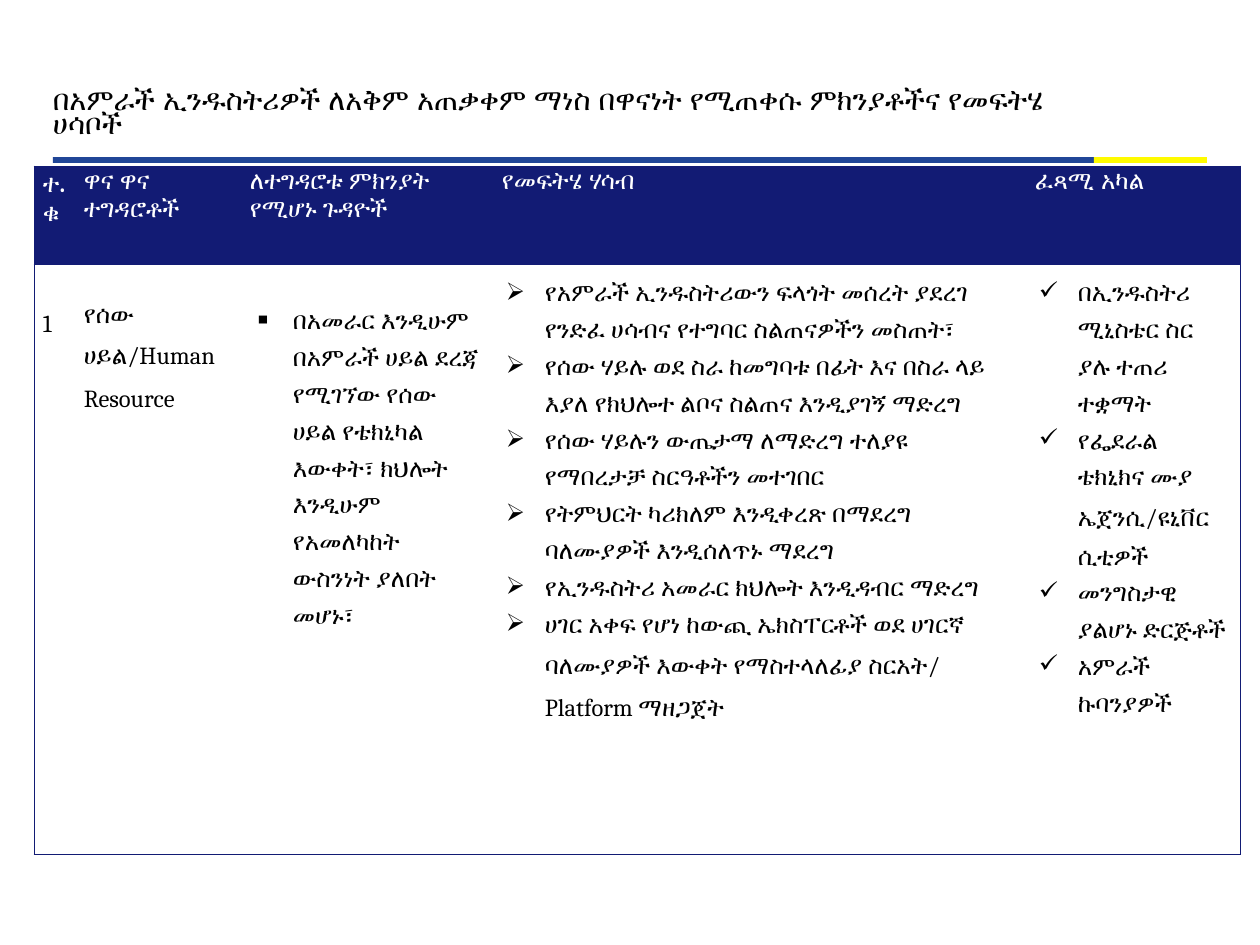
from lxml import etree
from pptx import Presentation
from pptx import util as u
from pptx.dml.color import RGBColor
from pptx.enum import shapes, text
from pptx.oxml.ns import qn

PX = 914400 // 126
NAVY, BLUE, YELLOW = "121B74", "204697", "FFFB00"
WHITE, BLACK = "FFFFFF", "000000"


def color(value):
    return RGBColor.from_string(value)


class Canvas:
    """Holds the text style and the current page."""
    font, size = "Cambria", u.Pt(14)

    def __init__(self, page):
        self.page = page

    def bar(self, left, top, width, height, fill):
        shape = self.page.shapes.add_shape(
            shapes.MSO_SHAPE.RECTANGLE, *(n * PX for n in (left, top, width, height)))
        shape.shadow.inherit = False
        shape.fill.solid()
        shape.fill.fore_color.rgb = color(fill)
        shape.line.fill.background()

    def words(self, para, words, ink, bold=False, spacing=1.0, font=None, size=None):
        para.line_spacing = spacing
        span = para.add_run()
        span.text = words
        style = {"name": font or self.font, "size": size or self.size, "bold": bold}
        for name, value in style.items():
            setattr(span.font, name, value)
        span.font.color.rgb = color(ink)

    def title(self, left, top, width, height, words):
        box = self.page.shapes.add_textbox(*(n * PX for n in (left, top, width, height)))
        frame = box.text_frame
        layout = {"word_wrap": True, "vertical_anchor": text.MSO_ANCHOR.MIDDLE,
                  "margin_left": 0, "margin_right": 0, "margin_top": 0, "margin_bottom": 0}
        for name, value in layout.items():
            setattr(frame, name, value)
        self.words(frame.paragraphs[0], words, BLACK, True, 0.7, "Karla", u.Pt(16.6))

    def table(self, left, top, widths, heights):
        frame = self.page.shapes.add_table(
            len(heights), len(widths), left * PX, top * PX,
            sum(widths) * PX, sum(heights) * PX)
        for column, width in zip(frame.table.columns, widths):
            column.width = width * PX
        for row, height in zip(frame.table.rows, heights):
            row.height = height * PX
        return frame.table

    def cell(self, cell, paras, fill, ink, sides, margins, bullet=None, **style):
        names = ("margin_left", "margin_top", "margin_right", "margin_bottom")
        for name, value in zip(names, margins):
            setattr(cell, name, value * PX)
        self.borders(cell, sides)
        cell.fill.solid()
        cell.fill.fore_color.rgb = color(fill)
        for index, words in enumerate(paras):
            frame = cell.text_frame
            para = frame.add_paragraph() if index else frame.paragraphs[0]
            if bullet:
                self.bullet(para, bullet)
            self.words(para, words, ink, **style)

    def borders(self, cell, sides):
        props = cell._tc.get_or_add_tcPr()
        for side in "LRTB":
            line = etree.SubElement(props, qn("a:ln" + side), w=str(u.Pt(0.5)))
            if side in sides:
                fill = etree.SubElement(line, qn("a:solidFill"))
                etree.SubElement(fill, qn("a:srgbClr"), val=NAVY)
            else:
                etree.SubElement(line, qn("a:noFill"))

    def bullet(self, para, mark):
        props = para._p.get_or_add_pPr()
        props.set("marL", str(39 * PX))
        props.set("indent", str(-39 * PX))
        etree.SubElement(props, qn("a:buChar"), char=mark)


HEADINGS = [  # words, bold
    ("ተ.ቁ", True),
    ("ዋና ዋና ተግዳሮቶች", False),
    ("ለተግዳሮቱ ምክንያት የሚሆኑ ጉዳዮች", False),
    ("የመፍትሄ ሃሳብ", True),
    ("ፈጻሚ አካል", True),
]
LISTED = (13, 6, 13, 6)
BODY = [  # bullet, margins, paragraphs
    (None, (9, 32, 9, 0), ["1"]),
    (None, (9, 28, 9, 0), ["የሰው ሀይል/Human Resource"]),
    ("▪", (13, 34, 13, 6), [
        "በአመራር እንዲሁም በአምራች ሀይል ደረጃ የሚገኘው የሰው ሀይል የቴክኒካል "
        "እውቀት፣ ክህሎት እንዲሁም የአመለካከት ውስንነት ያለበት መሆኑ፣"]),
    ("➢", LISTED, [
        "የአምራች ኢንዱስትሪውን ፍላጎት መሰረት ያደረገ የንድፈ ሀሳብና የተግባር ስልጠናዎችን መስጠት፣",
        "የሰው ሃይሉ ወደ ስራ ከመግባቱ በፊት እና በስራ ላይ እያለ የክህሎተ ልቦና ስልጠና እንዲያገኝ ማድረግ",
        "የሰው ሃይሉን ውጤታማ ለማድረግ ተለያዩ የማበረታቻ ስርዓቶችን መተገበር",
        "የትምህርት ካሪክለም እንዲቀረጽ በማደረግ ባለሙያዎች እንዲሰለጥኑ ማደረግ",
        "የኢንዱስትሪ አመራር ክህሎት እንዲዳብር ማድረግ",
        "ሀገር አቀፍ የሆነ ከውጪ ኤክስፐርቶች ወደ ሀገርኛ ባለሙያዎች እውቀት "
        "የማስተላለፊያ ስርአት/ Platform ማዘጋጀት"]),
    ("✓", LISTED, [
        "በኢንዱስትሪ ሚኒስቴር ስር ያሉ ተጠሪ ተቋማት",
        "የፌደራል ቴክኒክና ሙያ ኤጀንሲ/ዩኒቨርሲቲዎች",
        "መንግስታዊ ያልሆኑ ድርጅቶች",
        "አምራች ኩባንያዎች"]),
]


def main():
    deck = Presentation()
    deck.slide_width, deck.slide_height = u.Inches(10), u.Inches(7.5)
    canvas = Canvas(deck.slides.add_slide(deck.slide_layouts[6]))

    # Title and rule
    canvas.bar(53, 157, 1041, 6, BLUE)
    canvas.bar(1094, 157, 113, 6, YELLOW)
    canvas.title(53, 69, 1050, 92,
                 "በአምራች ኢንዱስትሪዎች ለአቅም አጠቃቀም ማነስ በዋናነት የሚጠቀሱ ምክንያቶችና የመፍትሄ ሀሳቦች")

    # Table of challenges, causes, solutions and owners
    table = canvas.table(34, 166, [41, 166, 252, 533, 215], [98, 590])
    outer = {0: "L", len(BODY) - 1: "R"}
    for index, (words, bold) in enumerate(HEADINGS):
        canvas.cell(table.cell(0, index), [words], NAVY, WHITE, "T" + outer.get(index, ""),
                    (9, 0, 9, 0), bold=bold, spacing=1.15)
    for index, (bullet, margins, paras) in enumerate(BODY):
        canvas.cell(table.cell(1, index), paras, WHITE, BLACK, "TB" + outer.get(index, ""),
                    margins, bullet, spacing=1.5)

    deck.save("out.pptx")


if __name__ == "__main__":
    main()
